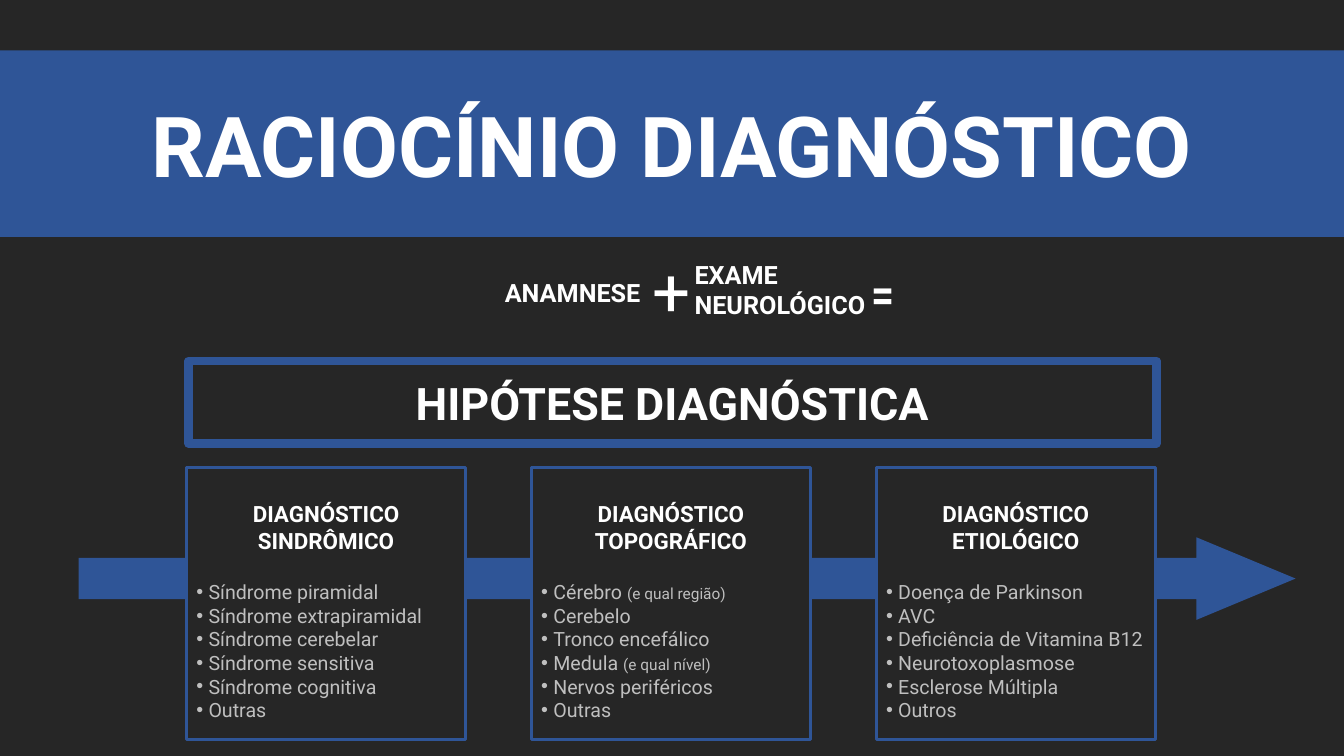
from dataclasses import dataclass

from lxml import etree
from pptx import Presentation
from pptx.dml import color
from pptx.enum import shapes, text
from pptx.oxml import ns
from pptx.util import Inches, Pt


@dataclass(frozen=True)
class Theme:
    background: str = "262626"
    blue: str = "2F5597"
    white: str = "FFFFFF"
    grey: str = "BFBFBF"
    font: str = "Roboto"
    equals_font: str = "Karla"
    title: int = 60
    plus: int = 48
    equals: int = 36
    hypothesis: int = 32
    term: int = 18
    heading: int = 16
    item: int = 14
    note: int = 11
    frame_line: float = 6
    card_line: float = 2.25


theme = Theme()
rgb = color.RGBColor.from_string
CENTER = text.PP_ALIGN.CENTER
LEFT = text.PP_ALIGN.LEFT
RECTANGLE = shapes.MSO_SHAPE.RECTANGLE


def add_block(kind, left, top, width, height, fill=None, line=None):
    shape = slide.shapes.add_shape(kind, Inches(left), Inches(top), Inches(width), Inches(height))
    shape.shadow.inherit = False
    if fill:
        shape.fill.solid()
        shape.fill.fore_color.rgb = rgb(fill)
    else:
        shape.fill.background()
    if line:
        shape.line.color.rgb = rgb(theme.blue)
        shape.line.width = Pt(line)
    else:
        shape.line.fill.background()
    shape.text_frame.word_wrap = True
    shape.text_frame.vertical_anchor = text.MSO_ANCHOR.MIDDLE
    return shape


def add_run(paragraph, words, size, alignment=CENTER, bold=True, ink=theme.white, font=theme.font):
    paragraph.alignment = alignment
    run = paragraph.add_run()
    run.text = words
    run.font.size = Pt(size)
    run.font.bold = bold
    run.font.name = font
    run.font.color.rgb = rgb(ink)


presentation = Presentation()
presentation.slide_width = Inches(13.33)
presentation.slide_height = Inches(7.5)
slide = presentation.slides.add_slide(presentation.slide_layouts[6])
slide.background.fill.solid()
slide.background.fill.fore_color.rgb = rgb(theme.background)

banner = add_block(RECTANGLE, 0, 0.5, 13.33, 1.85, fill=theme.blue)
add_run(banner.text_frame.paragraphs[0], "RACIOCÍNIO DIAGNÓSTICO", theme.title)

formula = [
    (4.43, 2.45, 2.5, 0.84, ["ANAMNESE"], theme.term, CENTER, True, theme.font, 1.2),
    (6.79, 2.19, 2.94, 1.36, ["EXAME", "NEUROLÓGICO"], theme.term, LEFT, True, theme.font, 1),
    (5.41, 2.14, 2.5, 1.46, ["+"], theme.plus, CENTER, False, theme.font, 1),
    (7.51, 2.14, 2.5, 1.46, ["="], theme.equals, CENTER, True, theme.equals_font, 1),
]
for left, top, width, height, lines, size, alignment, bold, font, spacing in formula:
    box = slide.shapes.add_textbox(Inches(left), Inches(top), Inches(width), Inches(height))
    frame = box.text_frame
    frame.word_wrap = True
    frame.vertical_anchor = text.MSO_ANCHOR.MIDDLE
    for index, words in enumerate(lines):
        paragraph = frame.add_paragraph() if index else frame.paragraphs[0]
        paragraph.line_spacing = spacing
        add_run(paragraph, words, size, alignment, bold, font=font)

hypothesis = add_block(RECTANGLE, 1.87, 3.58, 9.6, 0.82, line=theme.frame_line)
add_run(hypothesis.text_frame.paragraphs[0], "HIPÓTESE DIAGNÓSTICA", theme.hypothesis)

arrow = add_block(shapes.MSO_SHAPE.RIGHT_ARROW, 0.78, 5.33, 12.07, 0.82, fill=theme.blue)
arrow.adjustments[0] = 0.5
arrow.adjustments[1] = 1.2

cards = [
    ("SINDRÔMICO", [
        ("Síndrome piramidal", ""), ("Síndrome extrapiramidal", ""), ("Síndrome cerebelar", ""),
        ("Síndrome sensitiva", ""), ("Síndrome cognitiva", ""), ("Outras", ""),
    ]),
    ("TOPOGRÁFICO", [
        ("Cérebro ", "(e qual região)"), ("Cerebelo", ""), ("Tronco encefálico", ""),
        ("Medula ", "(e qual nível)"), ("Nervos periféricos", ""), ("Outras", ""),
    ]),
    ("ETIOLÓGICO", [
        ("Doença de Parkinson", ""), ("AVC", ""), ("Deficiência de Vitamina B12", ""),
        ("Neurotoxoplasmose", ""), ("Esclerose Múltipla", ""), ("Outros", ""),
    ]),
]
for column, (kind, items) in enumerate(cards):
    card = add_block(RECTANGLE, 1.85 + 3.42 * column, 4.64, 2.77, 2.7, theme.background, theme.card_line)
    frame = card.text_frame
    frame.vertical_anchor = text.MSO_ANCHOR.TOP
    frame.margin_top = Inches(0.32)
    add_run(frame.paragraphs[0], "DIAGNÓSTICO", theme.heading)
    add_run(frame.add_paragraph(), kind, theme.heading)
    for index, (item, note) in enumerate(items):
        paragraph = frame.add_paragraph()
        properties = paragraph._p.get_or_add_pPr()
        properties.set("marL", str(Inches(0.12)))
        properties.set("indent", str(-Inches(0.12)))
        etree.SubElement(properties, ns.qn("a:buFont"), typeface="Arial")
        etree.SubElement(properties, ns.qn("a:buChar"), char="•")
        if index == 0:
            paragraph.space_before = Pt(19)
        add_run(paragraph, item, theme.item, LEFT, False, theme.grey)
        if note:
            add_run(paragraph, note, theme.note, LEFT, False, theme.grey)

presentation.save("out.pptx")
